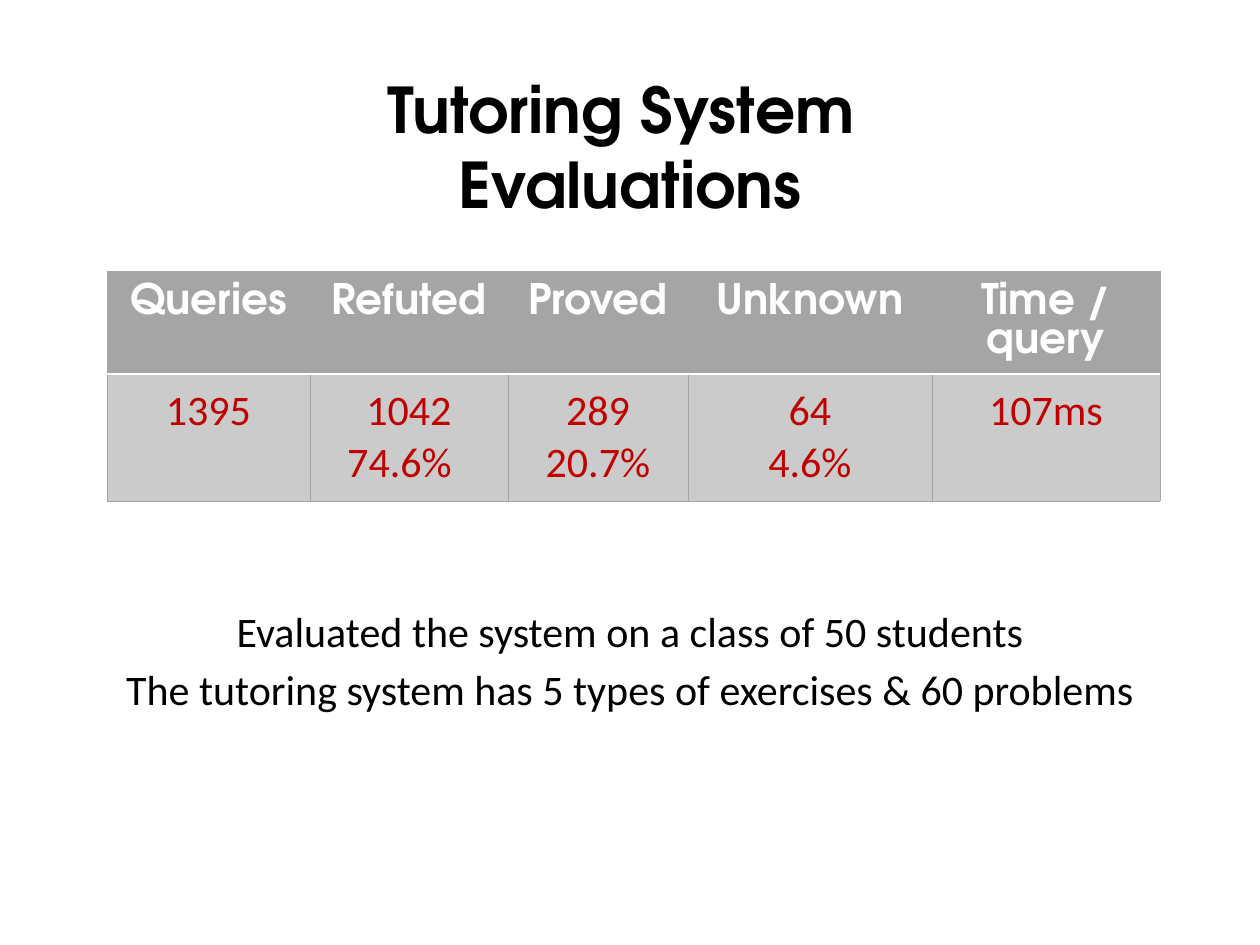
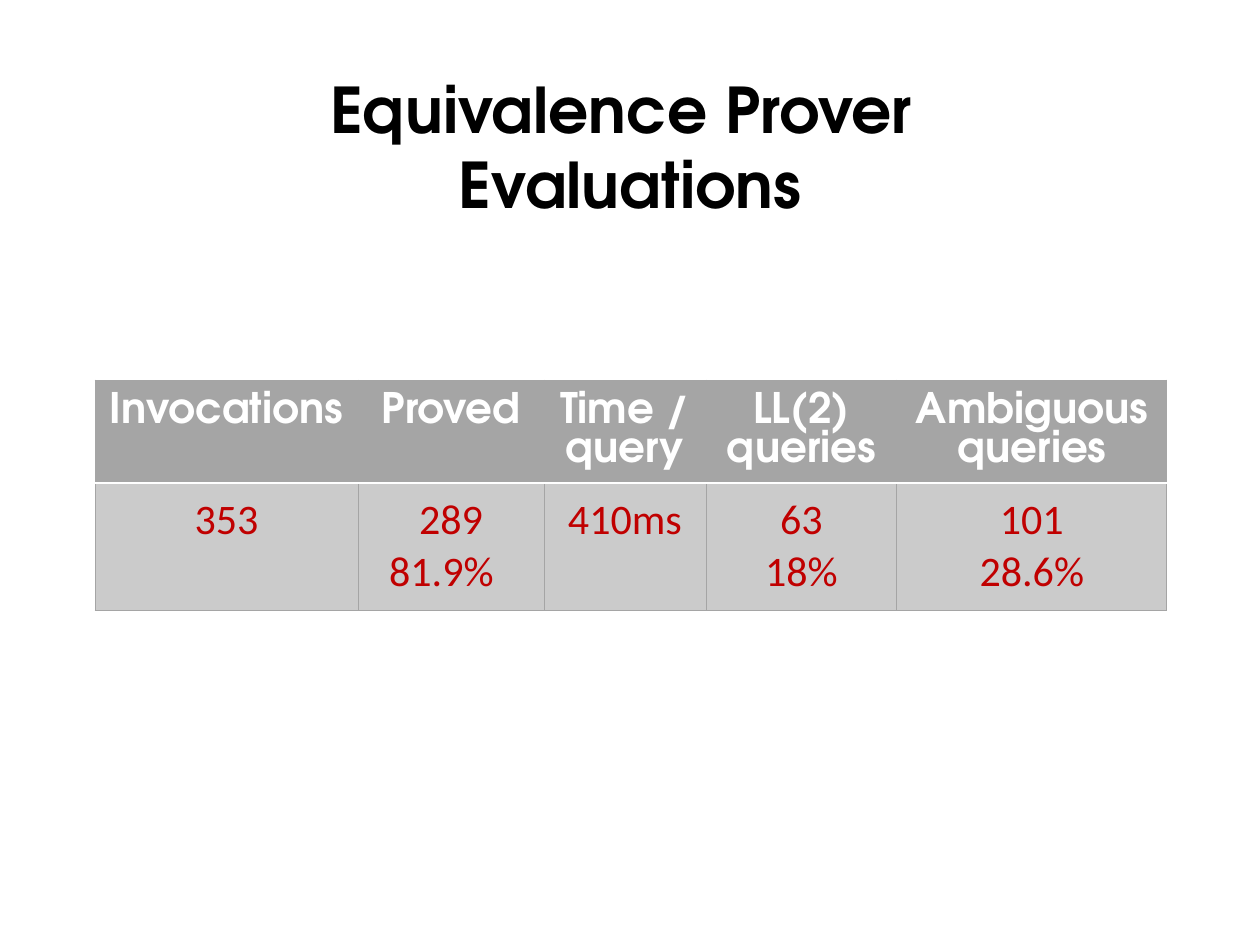
import pptx
import pptx.util
import pptx.dml.color
import pptx.enum.text
import pptx.oxml
import pptx.oxml.ns

RGB = pptx.dml.color.RGBColor
BLACK = RGB(0x00, 0x00, 0x00)
WHITE = RGB(0xFF, 0xFF, 0xFF)
GREY = RGB(0xA5, 0xA5, 0xA5)
PALE = RGB(0xCB, 0xCB, 0xCB)
RED = RGB(0xC0, 0x00, 0x00)
HEAD = "TeX Gyre Adventor"
BODY = "Calibri"
SCALE = 914400 / 126
INSET = 12
ROWS = (103, 127)
TITLE = (87, 50, 1086, 183)


def px(size):
    """Turn px into EMU."""
    return pptx.util.Emu(round(size * SCALE))


def style(para, face, size, color, bold=False, space=None):
    """Centre a paragraph and set its font and line spacing."""
    para.alignment = pptx.enum.text.PP_ALIGN.CENTER
    para.line_spacing = space
    font = para.font
    font.name, font.size, font.bold = face, pptx.util.Pt(size), bold
    font.color.rgb = color


def pad(item):
    """Give a cell or text frame the same inset on all sides."""
    item.margin_left = item.margin_right = px(INSET)
    item.margin_top = item.margin_bottom = px(INSET)


def title(slide, text, box):
    """Fill and place the title."""
    shape = slide.shapes.title
    shape.left, shape.top, shape.width, shape.height = map(px, box)
    frame = shape.text_frame
    frame.text = text
    frame.word_wrap = True
    frame.auto_size = pptx.enum.text.MSO_AUTO_SIZE.NONE
    frame.vertical_anchor = pptx.enum.text.MSO_ANCHOR.BOTTOM
    pad(frame)
    style(frame.paragraphs[0], HEAD, 36, BLACK, True, pptx.util.Pt(43))


def edge(cell, side, color, width):
    """Draw one border of a cell."""
    line = pptx.oxml.parse_xml(
        f'<a:ln{side} {pptx.oxml.ns.nsdecls("a")} w="{pptx.util.Pt(width)}">'
        f'<a:solidFill><a:srgbClr val="{color}"/></a:solidFill></a:ln{side}>')
    cell._tc.get_or_add_tcPr().append(line)


def fill(cell, text, top):
    """Write and format one header or value cell."""
    cell.text = text
    pad(cell)
    split = "B" if top else "T"
    for side in "LRTB":
        rule = (WHITE, 1) if side == split else (GREY, 0.5)
        edge(cell, side, *rule)
    cell.fill.solid()
    cell.fill.fore_color.rgb = GREY if top else PALE
    for para in cell.text_frame.paragraphs:
        if top:
            style(para, HEAD, 24, WHITE, True, pptx.util.Pt(22.3))
        else:
            style(para, BODY, 24, RED)


def table(slide, left, top, cols, data):
    """Add a results table with a header and a value row."""
    grid = slide.shapes.add_table(
        len(data), len(cols), px(left), px(top),
        px(sum(cols)), px(sum(ROWS))).table
    for col, width in zip(grid.columns, cols):
        col.width = px(width)
    for row, high in zip(grid.rows, ROWS):
        row.height = px(high)
    for r, line in enumerate(data):
        for c, text in enumerate(line):
            fill(grid.cell(r, c), text, r == 0)
    share = grid.cell(1, 1).text_frame.paragraphs[1]
    share._p.get_or_add_pPr().set("marR", str(px(19)))


def notes(slide, lines, box):
    """Add centred remarks below the table."""
    frame = slide.shapes.add_textbox(*map(px, box)).text_frame
    frame.word_wrap = True
    frame.text = "\n".join(lines)
    for para in frame.paragraphs:
        style(para, BODY, 24, BLACK, space=0.9)
        para.space_before = pptx.util.Pt(7.5)


def page(deck, text, *grid):
    """Add a slide with a title and a results table."""
    slide = deck.slides.add_slide(deck.slide_layouts[5])
    title(slide, text, TITLE)
    table(slide, *grid)
    return slide


def main():
    """Build both slides and save them."""
    deck = pptx.Presentation()
    deck.slide_width, deck.slide_height = px(1260), px(945)
    tutor = page(
        deck, "Tutoring System \vEvaluations", 107, 271,
        (203, 198, 180, 244, 228),
        (("Queries", "Refuted", "Proved", "Unknown", "Time / query"),
         ("1395", "1042\n74.6%", "289\n20.7%", "64\n4.6%", "107ms")))
    notes(tutor, ("Evaluated the system on a class of 50 students",
                  "The tutoring system has 5 types of exercises & 60 problems"),
          (87, 605, 1086, 247))
    page(
        deck, "Equivalence Prover \vEvaluations", 95, 380,
        (263, 186, 162, 191, 270),
        (("Invocations", "Proved", "Time / query", "LL(2)\nqueries",
          "Ambiguous queries"),
         ("353", "289\n81.9%", "410ms", "63\n18%", "101\n28.6%")))
    deck.save("out.pptx")


if __name__ == "__main__":
    main()
